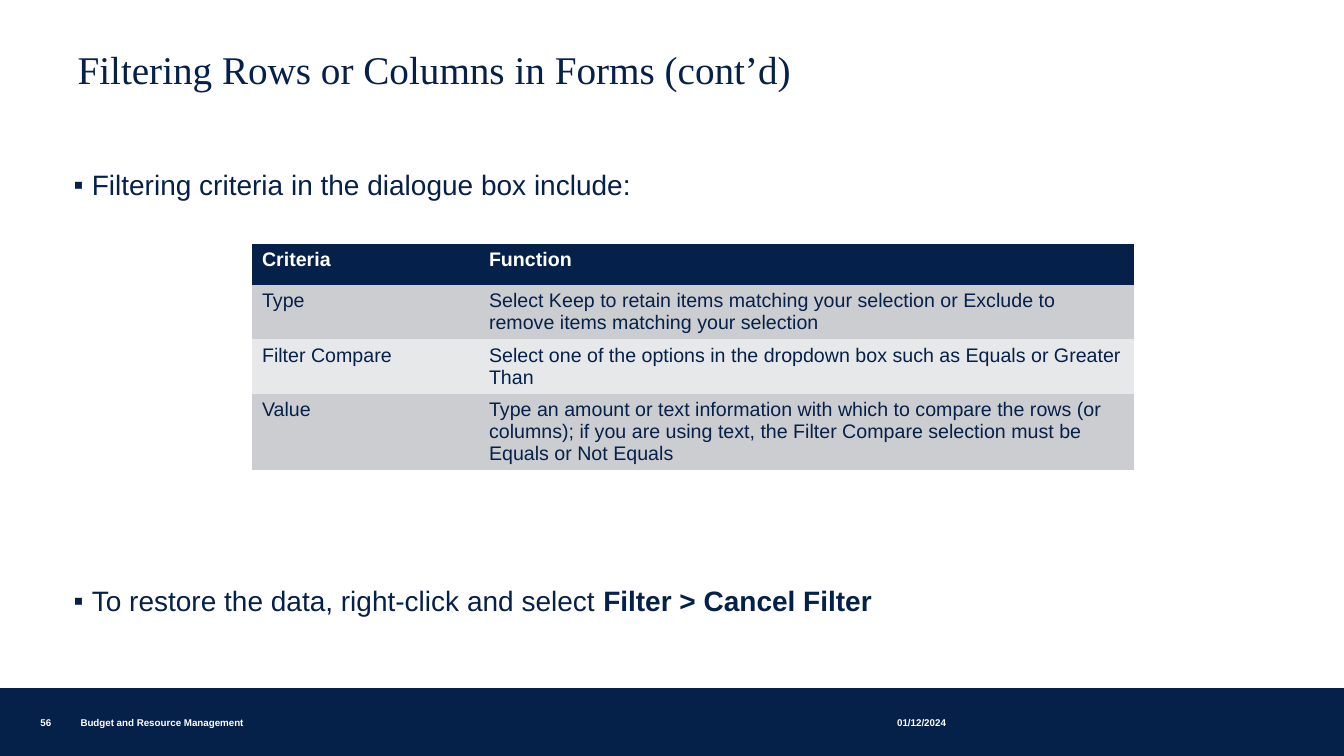
"""Build the slide on filtering rows or columns in forms."""
import pptx
import pptx.dml.color
import pptx.enum.shapes
import pptx.enum.text
import pptx.oxml.ns
import pptx.util
import lxml.etree

Cm = pptx.util.Cm
Pt = pptx.util.Pt
RGBColor = pptx.dml.color.RGBColor
ALIGN = pptx.enum.text.PP_ALIGN
ANCHOR = pptx.enum.text.MSO_ANCHOR
qn = pptx.oxml.ns.qn

NAVY = RGBColor(0x05, 0x20, 0x49)
WHITE = RGBColor(0xFF, 0xFF, 0xFF)
GREY = RGBColor(0xCC, 0xCD, 0xD0)
PALE = RGBColor(0xE7, 0xE8, 0xE9)
PLAIN = "{2D5ABB26-0587-4C30-8999-92F81FD0307C}"


def add_run(para, text, size, color, bold=False, face="Arial"):
    run = para.add_run()
    run.text = text
    run.font.name = face
    run.font.size = Pt(size)
    run.font.bold = bold
    run.font.color.rgb = color


def place(shape, left, top, width, height):
    shape.left, shape.top = Cm(left), Cm(top)
    shape.width, shape.height = Cm(width), Cm(height)


deck = pptx.Presentation()
deck.slide_width = Cm(33.87)
deck.slide_height = Cm(19.05)
slide = deck.slides.add_slide(deck.slide_layouts[1])
shapes = slide.shapes

title = shapes.title
place(title, 1.7, 1.19, 29.97, 1.27)
frame = title.text_frame
frame.auto_size = pptx.enum.text.MSO_AUTO_SIZE.NONE
frame.vertical_anchor = ANCHOR.MIDDLE
para = frame.paragraphs[0]
para.alignment = ALIGN.LEFT
para.line_spacing = 0.85
add_run(para, "Filtering Rows or Columns in Forms (cont’d)", 28, NAVY,
        face="Times New Roman")

body = slide.placeholders[1]
place(body, 1.6, 4.19, 30.84, 11.15)
frame = body.text_frame
frame.auto_size = pptx.enum.text.MSO_AUTO_SIZE.NONE
points = [
    (0, [("Filtering criteria in the dialogue box include:", False)]),
    (275.5, [("To restore the data, right-click and select ", False),
             ("Filter > Cancel Filter", True)]),
]
for i, (gap, parts) in enumerate(points):
    para = frame.add_paragraph() if i else frame.paragraphs[0]
    props = para._p.get_or_add_pPr()
    props.set("marL", str(Cm(0.46)))
    props.set("indent", str(-Cm(0.46)))
    tint = lxml.etree.SubElement(props, qn("a:buClr"))
    lxml.etree.SubElement(tint, qn("a:srgbClr"), val=str(NAVY))
    lxml.etree.SubElement(props, qn("a:buFont"), typeface="Arial")
    lxml.etree.SubElement(props, qn("a:buChar"), char="▪")
    para.line_spacing = 0.9
    para.space_before = Pt(gap)
    for text, bold in parts:
        add_run(para, text, 20, NAVY, bold)

rows = [
    ("Criteria", "Function"),
    ("Type", "Select Keep to retain items matching your selection "
     "or Exclude to remove items matching your selection"),
    ("Filter Compare", "Select one of the options in the dropdown box "
     "such as Equals or Greater Than"),
    ("Value", "Type an amount or text information with which to compare "
     "the rows (or columns); if you are using text, the Filter Compare "
     "selection must be Equals or Not Equals"),
]
heights = [1.03, 1.37, 1.37, 1.91]
fills = [NAVY, GREY, PALE, GREY]
table = shapes.add_table(4, 2, Cm(6.35), Cm(6.15), Cm(22.23),
                         Cm(sum(heights))).table
table._tbl.tblPr.find(qn("a:tableStyleId")).text = PLAIN
table.columns[0].width = Cm(5.72)
table.columns[1].width = Cm(16.51)
for r, row in enumerate(rows):
    table.rows[r].height = Cm(heights[r])
    for c, text in enumerate(row):
        cell = table.cell(r, c)
        cell.fill.solid()
        cell.fill.fore_color.rgb = fills[r]
        add_run(cell.text_frame.paragraphs[0], text, 14,
                NAVY if r else WHITE, r == 0)

band = shapes.add_shape(pptx.enum.shapes.MSO_SHAPE.RECTANGLE,
                        Cm(0), Cm(17.37), Cm(33.87), Cm(1.68))
band.shadow.inherit = False
band.fill.solid()
band.fill.fore_color.rgb = NAVY
band.line.color.rgb = NAVY
band.line.width = Pt(1.5)

notes = [
    ("56", 1.02, 0.91),
    ("Budget and Resource Management", 2.03, 15.98),
    ("01/12/2024", 22.61, 3.43),
]
for text, left, width in notes:
    box = shapes.add_textbox(Cm(left), Cm(17.93), Cm(width), Cm(0.43))
    frame = box.text_frame
    frame.word_wrap = True
    frame.vertical_anchor = ANCHOR.BOTTOM
    frame.margin_left = frame.margin_right = Cm(0)
    frame.margin_top = frame.margin_bottom = Cm(0)
    add_run(frame.paragraphs[0], text, 7, WHITE, True)

deck.save("out.pptx")
